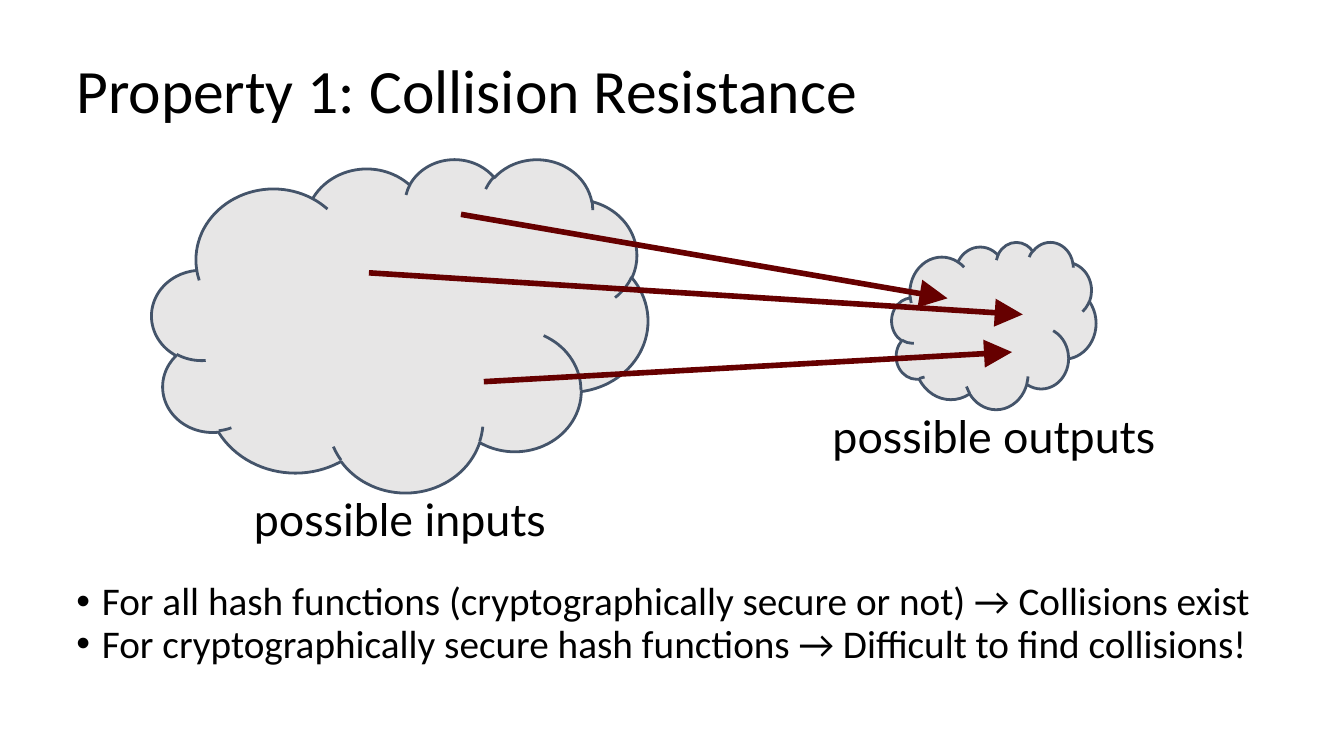
from dataclasses import dataclass
from lxml.etree import SubElement
from pptx import Presentation
from pptx.dml.color import RGBColor
from pptx.enum.shapes import MSO_CONNECTOR as CONN, MSO_SHAPE as SHAPE
from pptx.enum.text import MSO_ANCHOR as ANCHOR, PP_ALIGN as ALIGN
from pptx.oxml.ns import qn
from pptx.util import Pt

PX = 4572
WIDTH, HEIGHT = 2000, 1125
INSET, HANG = 20, 38


@dataclass(frozen=True)
class Theme:
    ink: str = "000000"
    cloud: str = "E7E6E6"
    outline: str = "44546A"
    arrow: str = "660000"
    font: str = "Calibri"
    label_font: str = "Lato"
    title_size: int = 33
    label_size: int = 24
    body_size: int = 21
    outline_width: float = 1.5
    arrow_width: int = 3


THEME = Theme()

TITLE = ("Property 1: Collision Resistance", (94, 21, 1800, 188))
BULLETS = [
    "For all hash functions (cryptographically secure or not) → Collisions exist",
    "For cryptographically secure hash functions → Difficult to find collisions!",
]
BULLET_BOX = (94, 846, 1792, 212)
CLOUDS = [(226, 236, 738, 496), (1327, 360, 304, 249)]
LABELS = [
    ("possible inputs", (340, 712, 510, 100)),
    ("possible outputs", (1197, 588, 564, 100)),
]
ARROWS = [
    (686, 319, 1410, 444),
    (720, 568, 1506, 524),
    (549, 406, 1522, 468),
]


def emu(lengths):
    return [n * PX for n in lengths]


def rgb(color):
    return RGBColor.from_string(color)


def add_text(slide, lines, box, size, font=THEME.font, align=ALIGN.LEFT,
             anchor=ANCHOR.TOP, spacing=None, bullet=None):
    tf = slide.shapes.add_textbox(*emu(box)).text_frame
    tf.word_wrap = True
    tf.vertical_anchor = anchor
    tf.margin_left = tf.margin_right = INSET * PX
    tf.margin_top = tf.margin_bottom = INSET * PX
    for i, line in enumerate(lines):
        p = tf.add_paragraph() if i else tf.paragraphs[0]
        p.alignment = align
        p.line_spacing = spacing
        r = p.add_run()
        r.text = line
        r.font.name = font
        r.font.size = Pt(size)
        r.font.color.rgb = rgb(THEME.ink)
        if bullet:
            pr = p._p.get_or_add_pPr()
            pr.set("marL", str(HANG * PX))
            pr.set("indent", str(-HANG * PX))
            SubElement(pr, qn("a:buFont"), typeface="Arial")
            SubElement(pr, qn("a:buChar"), char=bullet)


def add_cloud(slide, box):
    sp = slide.shapes.add_shape(SHAPE.CLOUD, *emu(box))
    sp.shadow.inherit = False
    sp.fill.solid()
    sp.fill.fore_color.rgb = rgb(THEME.cloud)
    sp.line.color.rgb = rgb(THEME.outline)
    sp.line.width = Pt(THEME.outline_width)


def add_arrow(slide, ends):
    sp = slide.shapes.add_connector(CONN.STRAIGHT, *emu(ends))
    sp.line.color.rgb = rgb(THEME.arrow)
    sp.line.width = Pt(THEME.arrow_width)
    SubElement(sp.line._get_or_add_ln(), qn("a:tailEnd"),
               type="triangle", w="lg", len="lg")
    SubElement(sp._element.spPr, qn("a:effectLst"))


def main():
    prs = Presentation()
    prs.slide_width, prs.slide_height = emu((WIDTH, HEIGHT))
    slide = prs.slides.add_slide(prs.slide_layouts[6])

    add_text(slide, BULLETS, BULLET_BOX, THEME.body_size, spacing=0.9, bullet="•")
    for box in CLOUDS:
        add_cloud(slide, box)
    for label, box in LABELS:
        add_text(slide, [label], box, THEME.label_size,
                 font=THEME.label_font, align=ALIGN.CENTER)
    for ends in ARROWS:
        add_arrow(slide, ends)
    title, box = TITLE
    add_text(slide, [title], box, THEME.title_size,
             anchor=ANCHOR.BOTTOM, spacing=0.9)

    prs.save("out.pptx")


if __name__ == "__main__":
    main()
